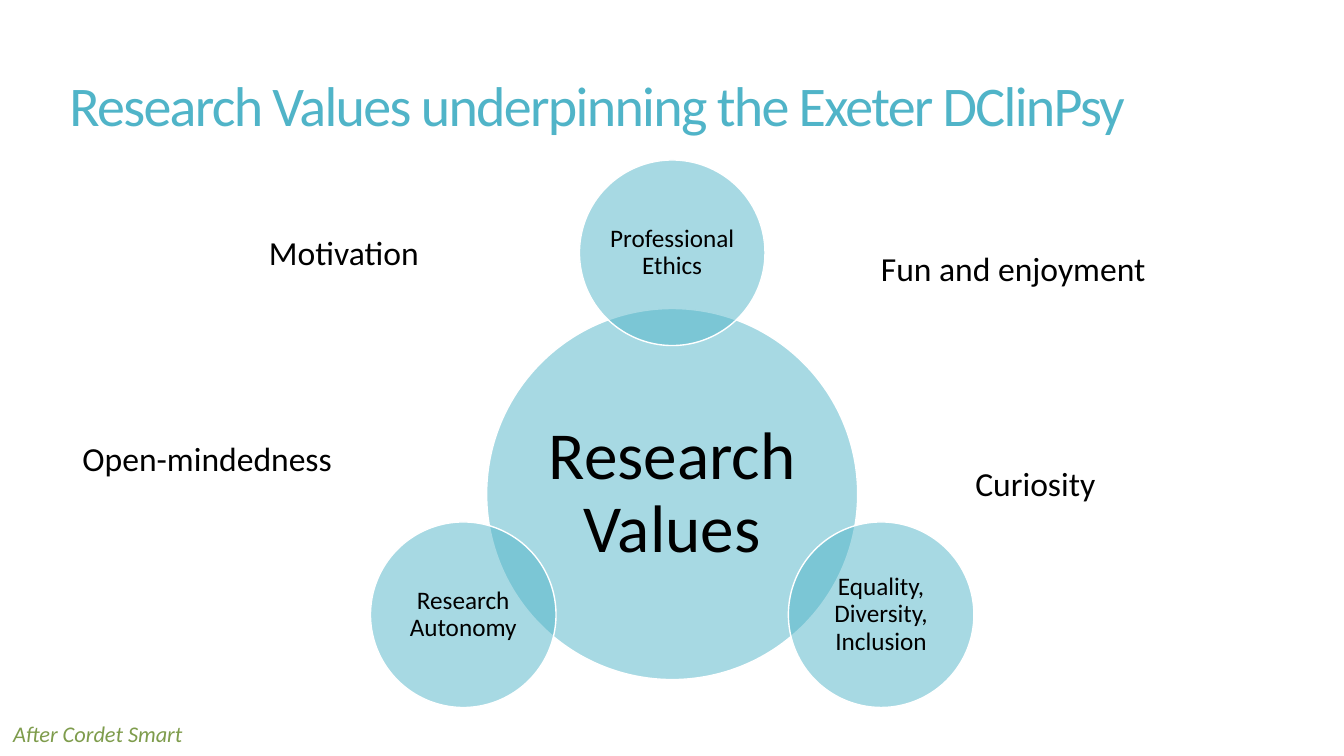
from dataclasses import dataclass
from math import cos, radians, sin

from lxml.etree import SubElement
from pptx import Presentation
from pptx.dml.color import RGBColor
from pptx.enum.shapes import MSO_SHAPE
from pptx.enum.text import MSO_ANCHOR, PP_ALIGN
from pptx.oxml.ns import qn
from pptx.util import Cm, Pt


@dataclass(frozen=True)
class Theme:
    font: str = "Calibri"
    accent: RGBColor = RGBColor(0x50, 0xB4, 0xC8)
    outline: RGBColor = RGBColor(0xFF, 0xFF, 0xFF)
    ink: RGBColor = RGBColor(0, 0, 0)
    credit: RGBColor = RGBColor(0x7E, 0x9C, 0x4C)
    title_size: int = 40
    hub_size: int = 48
    satellite_size: int = 18
    label_size: int = 24
    credit_size: int = 16


class SlideBuilder:
    def __init__(self, slide, theme):
        self.slide = slide
        self.theme = theme

    def fill_text(self, text_frame, text, size, color):
        text_frame.text = text
        paragraph = text_frame.paragraphs[0]
        font = paragraph.runs[0].font
        font.name = self.theme.font
        font.size = Pt(size)
        font.color.rgb = color
        return paragraph

    def text_box(self, text, left, top, width, height, size, color, wrap=True):
        box = self.slide.shapes.add_textbox(Cm(left), Cm(top), Cm(width), Cm(height))
        box.text_frame.word_wrap = wrap
        return box.text_frame, self.fill_text(box.text_frame, text, size, color)

    def title(self, text):
        text_frame, paragraph = self.text_box(
            text, 1.5, 0.53, 29.64, 4.45, self.theme.title_size, self.theme.accent)
        text_frame.vertical_anchor = MSO_ANCHOR.MIDDLE
        paragraph.line_spacing = 0.85
        # Tighten the letters by 1.2 points.
        paragraph.runs[0].font._element.set("spc", "-120")

    def label(self, text, left, top, width):
        self.text_box(text, left, top, width, 1.27,
                      self.theme.label_size, self.theme.ink, wrap=False)

    def credit(self, text):
        _, paragraph = self.text_box(
            text, 0.08, 18.03, 10.11, 0.94, self.theme.credit_size, self.theme.credit)
        paragraph.runs[0].font.italic = True

    def circle(self, text, center_x, center_y, diameter, size, inset):
        """Draw a half-transparent circle around a centre, with its text inside."""
        shape = self.slide.shapes.add_shape(
            MSO_SHAPE.OVAL, Cm(center_x - diameter / 2), Cm(center_y - diameter / 2),
            Cm(diameter), Cm(diameter))
        shape.shadow.inherit = False
        shape.fill.solid()
        shape.fill.fore_color.rgb = self.theme.accent
        color = shape._element.spPr.find(qn("a:solidFill"))[0]
        SubElement(color, qn("a:alpha"), val="50000")
        shape.line.color.rgb = self.theme.outline
        shape.line.width = Pt(1)

        text_frame = shape.text_frame
        text_frame.word_wrap = True
        text_frame.vertical_anchor = MSO_ANCHOR.MIDDLE
        text_frame.margin_left = text_frame.margin_right = Cm(inset)
        text_frame.margin_top = text_frame.margin_bottom = Cm(inset)
        paragraph = self.fill_text(text_frame, text, size, self.theme.ink)
        paragraph.alignment = PP_ALIGN.CENTER
        paragraph.line_spacing = 0.9

    def radial_diagram(self, hub, satellites, center_x, center_y, diameter, orbit):
        """Draw a hub and, clockwise from the top, satellites of half its size."""
        self.circle(hub, center_x, center_y, diameter, self.theme.hub_size, 0.17)
        for index, text in enumerate(satellites):
            angle = radians(360 / len(satellites) * index)
            self.circle(text, center_x + orbit * sin(angle), center_y - orbit * cos(angle),
                        diameter / 2, self.theme.satellite_size, 0.08)


def main():
    presentation = Presentation()
    presentation.slide_width = Cm(33.87)
    presentation.slide_height = Cm(19.05)
    slide = presentation.slides.add_slide(presentation.slide_layouts[6])
    builder = SlideBuilder(slide, Theme())

    builder.title("Research Values underpinning the Exeter DClinPsy")
    builder.radial_diagram(
        "Research Values",
        ["Professional Ethics", "Equality, Diversity, Inclusion", "Research Autonomy"],
        center_x=16.94, center_y=12.45, diameter=9.35, orbit=6.08)
    for text, left, top, width in [
        ("Motivation", 6.53, 5.72, 4.34),
        ("Fun and enjoyment", 21.95, 6.12, 7.24),
        ("Curiosity", 24.33, 11.53, 3.56),
        ("Open-mindedness", 1.83, 10.92, 6.86),
    ]:
        builder.label(text, left, top, width)
    builder.credit("After Cordet Smart")

    presentation.save("out.pptx")


if __name__ == "__main__":
    main()
